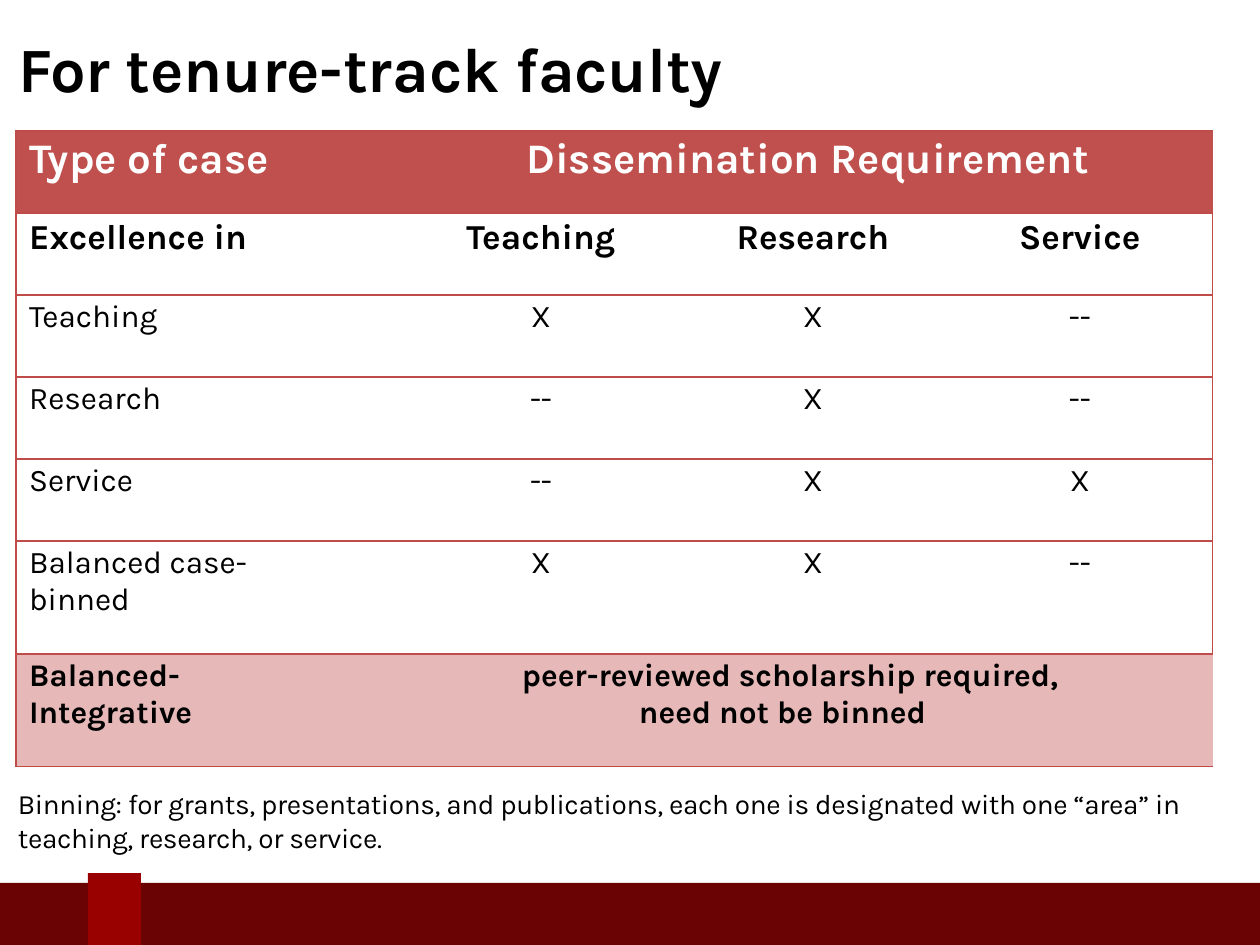
from lxml import etree
from pptx import Presentation
from pptx.dml.color import RGBColor
from pptx.enum.shapes import MSO_SHAPE
from pptx.enum.text import MSO_ANCHOR, PP_ALIGN
from pptx.oxml.ns import qn
from pptx.util import Emu, Pt

RECTANGLE = MSO_SHAPE.RECTANGLE
MIDDLE = MSO_ANCHOR.MIDDLE
LEFT, CENTER = PP_ALIGN.LEFT, PP_ALIGN.CENTER

SLIDE_WIDTH, SLIDE_HEIGHT = 1260, 945
EMU_PER_PX = 914400 / 126
PLAIN_TABLE_STYLE = "{2D5ABB26-0587-4C30-8999-92F81FD0307C}"


def px(length):
    return Emu(round(length * EMU_PER_PX))


def color(value):
    return RGBColor.from_string(value)


def write(text_frame, text, size=18, bold=False, ink="000000", align=LEFT,
          before=2, indent=0, hanging=0, spacing=0):
    paragraph = text_frame.paragraphs[0]
    paragraph.alignment = align
    paragraph.space_before = Pt(before)
    properties = paragraph._p.get_or_add_pPr()
    properties.set("marL", str(px(indent)))
    properties.set("indent", str(px(-hanging)))
    run = paragraph.add_run()
    run.text = text
    run.font.name = "Karla"
    run.font.size = Pt(size)
    run.font.bold = bold
    run.font.color.rgb = color(ink)
    if spacing:
        run._r.get_or_add_rPr().set("spc", str(spacing))


class SlideBuilder:
    border = "BF4C48"
    header = "C0504D"
    highlight = "E6B9B8"

    def __init__(self, presentation):
        self.slide = presentation.slides.add_slide(presentation.slide_layouts[6])

    def block(self, left, top, width, height, fill):
        shape = self.slide.shapes.add_shape(
            RECTANGLE, px(left), px(top), px(width), px(height))
        shape.shadow.inherit = False
        shape.fill.solid()
        shape.fill.fore_color.rgb = color(fill)
        shape.line.fill.background()

    def text(self, left, top, width, height, text, **text_format):
        box = self.slide.shapes.add_textbox(px(left), px(top), px(width), px(height))
        frame = box.text_frame
        frame.word_wrap = True
        frame.vertical_anchor = MIDDLE
        frame.margin_left = frame.margin_right = frame.margin_bottom = 0
        frame.margin_top = px(1)
        write(frame, text, before=1.1, indent=1, **text_format)

    def table(self, left, top, columns, rows):
        frame = self.slide.shapes.add_table(
            len(rows), len(columns), px(left), px(top), px(sum(columns)), px(sum(rows)))
        table = frame.table
        table.first_row = table.horz_banding = False
        table._tbl.tblPr.find(qn("a:tableStyleId")).text = PLAIN_TABLE_STYLE
        for column, width in zip(table.columns, columns):
            column.width = px(width)
        for row, height in zip(table.rows, rows):
            row.height = px(height)
        return table

    def cell_style(self, cell, sides, fill):
        cell.margin_left = cell.margin_right = cell.margin_bottom = 0
        cell.margin_top = px(4)
        properties = cell._tc.get_or_add_tcPr()
        for side in sides:
            line = etree.SubElement(properties, qn("a:ln" + side), w=str(Pt(0.75)))
            solid = etree.SubElement(line, qn("a:solidFill"))
            etree.SubElement(solid, qn("a:srgbClr"), val=self.border)
        if fill:
            cell.fill.solid()
            cell.fill.fore_color.rgb = color(fill)
        else:
            cell.fill.background()


def build_table(builder):
    columns = [387, 276, 268, 266]
    cases = [
        ["Type of case", "Dissemination Requirement"],
        ["Excellence in", "Teaching", "Research", "Service"],
        ["Teaching", "X", "X", "--"],
        ["Research", "--", "X", "--"],
        ["Service", "--", "X", "X"],
        ["Balanced case- binned", "X", "X", "--"],
        ["Balanced- Integrative",
         "peer-reviewed scholarship required, need not be binned"],
    ]
    last_row, last_column = len(cases) - 1, len(columns) - 1
    table = builder.table(16, 131, columns, [82] * 5 + [113] * 2)
    fills = {0: builder.header, last_row: builder.highlight}
    sizes = {0: 24, 1: 20}

    for row, texts in enumerate(cases):
        for column in range(len(columns)):
            sides = ["L"] * (column == 0) + ["R"] * (column == last_column) + ["T", "B"]
            builder.cell_style(table.cell(row, column), sides, fills.get(row))
        if len(texts) == 2:
            table.cell(row, 1).merge(table.cell(row, last_column))
        for column, text in enumerate(texts):
            cell = table.cell(row, column)
            layout = {"indent": 13} if column == 0 else {"align": CENTER}
            if row == last_row and column == 1:
                layout = {"indent": 236, "hanging": 117, "before": 2.3}
            # The two-line cells wrap before the right edge
            if row == last_row or (row == last_row - 1 and column == 0):
                cell.margin_right = px(126)
            write(cell.text_frame, text, size=sizes.get(row, 18),
                  bold=row in (0, 1, last_row),
                  ink="FFFFFF" if row == 0 else "000000", **layout)


def main():
    presentation = Presentation()
    presentation.slide_width = px(SLIDE_WIDTH)
    presentation.slide_height = px(SLIDE_HEIGHT)
    builder = SlideBuilder(presentation)

    # Footer band with a plain emblem block
    builder.block(0, 883, 88, 62, "690304")
    builder.block(141, 883, 1119, 62, "690304")
    builder.block(88, 873, 53, 72, "990000")

    # Title, table and note
    builder.text(17, 28, 751, 78, "For tenure-track faculty",
                 size=36, bold=True, spacing=-10)
    build_table(builder)
    builder.text(17, 785, 1187, 69,
                 "Binning: for grants, presentations, and publications, each one is "
                 "designated with one “area” in teaching, research, or service.",
                 size=16, spacing=-20)

    presentation.save("out.pptx")


if __name__ == "__main__":
    main()
